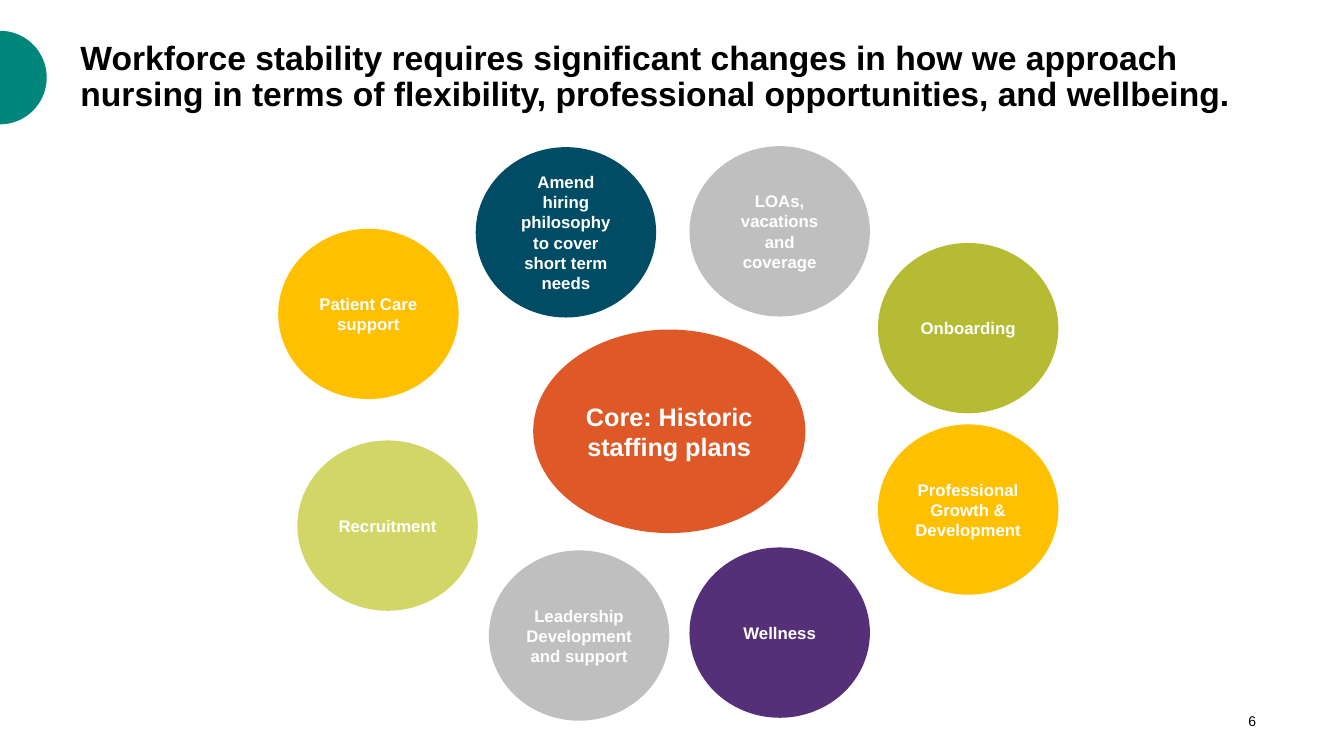
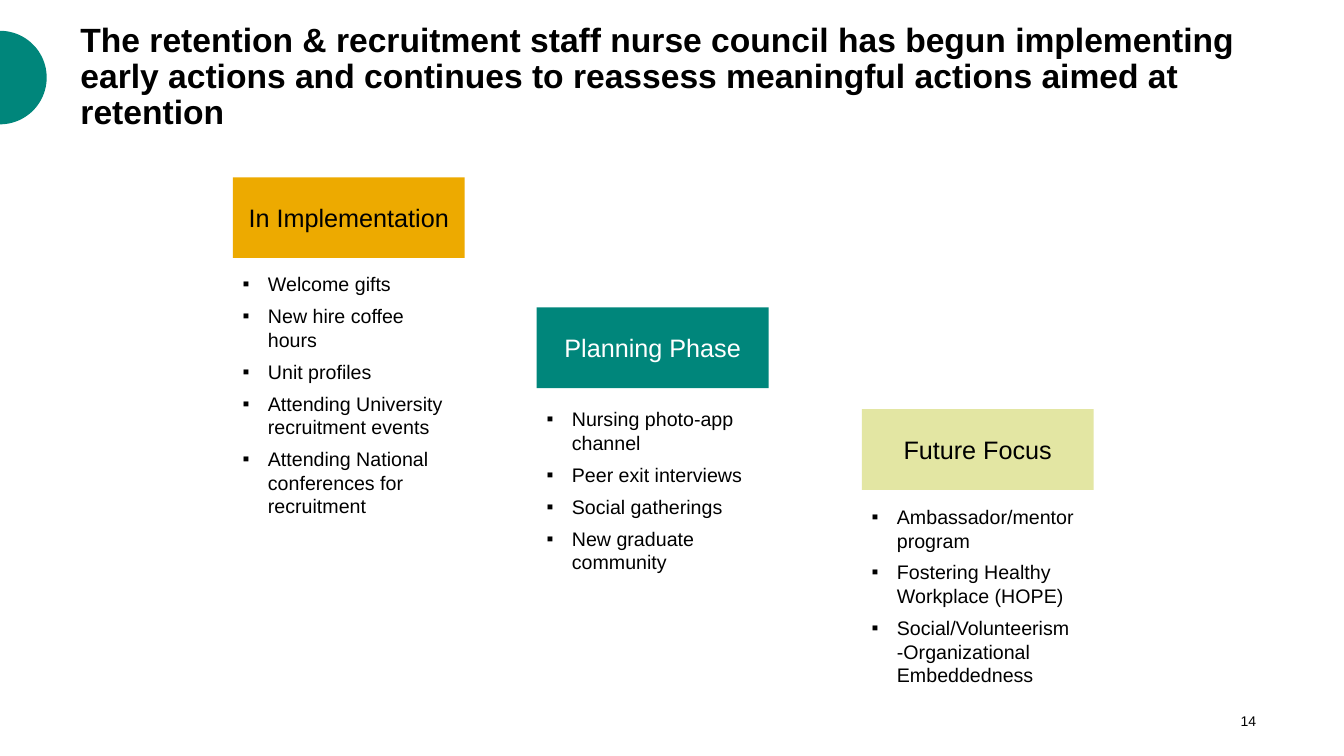
import math
from dataclasses import dataclass

from lxml import etree
from pptx import Presentation
from pptx.dml.color import RGBColor
from pptx.enum.shapes import MSO_SHAPE
from pptx.enum.text import MSO_ANCHOR, PP_ALIGN
from pptx.oxml.ns import qn
from pptx.util import Pt

OVAL, RECT = MSO_SHAPE.OVAL, MSO_SHAPE.RECTANGLE
TOP, MIDDLE = MSO_ANCHOR.TOP, MSO_ANCHOR.MIDDLE
LEFT, CENTER, RIGHT = PP_ALIGN.LEFT, PP_ALIGN.CENTER, PP_ALIGN.RIGHT


@dataclass(frozen=True)
class Theme:
    font: str = "Arial"
    black: str = "000000"
    white: str = "FFFFFF"
    teal: str = "00867B"
    navy: str = "004C64"
    rust: str = "DF5828"
    plum: str = "553078"
    gray: str = "BFBFBF"
    gold: str = "FFC000"
    amber: str = "EDAA00"
    olive: str = "B5BB32"
    lime: str = "D1D666"
    cream: str = "E3E6A3"
    title: int = 24
    head: int = 18
    body: int = 14
    label: int = 12
    page: int = 10


THEME = Theme()

# Satellite circles share one size: left, top, colour, lines
DISC = (128.9, 121.7)
DISCS = [
    (492.5, 104.4, THEME.gray, ["LOAs, vacations and coverage"]),
    (627.1, 173.5, THEME.olive, ["Onboarding"]),
    (627.1, 303.1, THEME.gold, ["Professional Growth & Development"]),
    (492.5, 391, THEME.plum, ["Wellness"]),
    (349.2, 393.1, THEME.gray, ["Leadership", "Development", "and support"]),
    (212.4, 314.6, THEME.lime, ["Recruitment"]),
    (198.7, 163.4, THEME.gold, ["Patient Care support"]),
    (339.8, 105.1, THEME.navy, ["Amend hiring philosophy to cover short term needs"]),
]

# Phases share one header size: left, top, list top, fill, ink, name, items
HEAD = (165.6, 57.6)
PHASES = [
    (166.3, 126.7, 190.8, THEME.amber, THEME.black, "In Implementation",
     ["Welcome gifts", "New hire coffee hours", "Unit profiles",
      "Attending University recruitment events",
      "Attending National conferences for recruitment"]),
    (383.4, 219.6, 287.3, THEME.teal, THEME.white, "Planning Phase",
     ["Nursing photo-app channel", "Peer exit interviews",
      "Social gatherings", "New graduate community"]),
    (615.6, 292.3, 357.1, THEME.cream, THEME.black, "Future Focus",
     ["Ambassador/mentor program", "Fostering Healthy Workplace (HOPE)",
      "Social/Volunteerism -Organizational Embeddedness"]),
]


def paint(shape, color):
    shape.shadow.inherit = False
    shape.fill.solid()
    shape.fill.fore_color.rgb = RGBColor.from_string(color)
    shape.line.fill.background()


def bullet(para):
    props = para._p.get_or_add_pPr()
    props.set("marL", str(Pt(18)))
    props.set("indent", str(-Pt(18)))
    etree.SubElement(props, qn("a:buFont")).set("typeface", THEME.font)
    etree.SubElement(props, qn("a:buChar")).set("char", "▪")


def write(shape, lines, *, size, color=THEME.black, bold=False, align=LEFT,
          anchor=MIDDLE, spacing=None, gap=0, bullets=False):
    """Fill a shape with one paragraph per line."""
    frame = shape.text_frame
    frame.word_wrap = True
    frame.vertical_anchor = anchor
    for i, line in enumerate(lines):
        para = frame.add_paragraph() if i else frame.paragraphs[0]
        if bullets:
            bullet(para)
        para.alignment = align
        if spacing:
            para.line_spacing = spacing
        if i and gap:
            para.space_before = Pt(gap)
        run = para.add_run()
        run.text = line
        run.font.name = THEME.font
        run.font.size = Pt(size)
        run.font.bold = bold
        run.font.color.rgb = RGBColor.from_string(color)


def add_text(slide, box, lines, **style):
    write(slide.shapes.add_textbox(*map(Pt, box)), lines, **style)


def add_block(slide, kind, box, fill, lines, **style):
    shape = slide.shapes.add_shape(kind, *map(Pt, box))
    paint(shape, fill)
    write(shape, lines, align=CENTER, **style)


def add_badge(slide, mid=55.4, radius=33.4, steps=60):
    """Half disc on the left edge."""
    turns = [math.pi * (i / steps - 0.5) for i in range(steps + 1)]
    points = [(Pt(radius * math.cos(t)), Pt(mid + radius * math.sin(t)))
              for t in turns]
    pen = slide.shapes.build_freeform(*points[0])
    pen.add_line_segments(points[1:], close=True)
    paint(pen.convert_to_shape(), THEME.teal)


def add_slide(deck, title, page):
    """Blank slide with the shared badge, title and page number."""
    slide = deck.slides.add_slide(deck.slide_layouts[6])
    add_badge(slide)
    add_text(slide, (50.4, 16.6, 853.9, 77.8), [title],
             size=THEME.title, bold=True, spacing=0.9)
    add_text(slide, (872.6, 500.4, 31.7, 28.8), [page],
             size=THEME.page, align=RIGHT)
    return slide


def add_wheel(slide):
    add_block(slide, OVAL, (380.9, 235.4, 194.4, 145.4), THEME.rust,
              ["Core: Historic staffing plans"],
              size=THEME.head, color=THEME.white, bold=True)
    for left, top, fill, lines in DISCS:
        add_block(slide, OVAL, (left, top, *DISC), fill, lines,
                  size=THEME.label, color=THEME.white, bold=True)


def add_phases(slide):
    wide, high = HEAD
    for left, top, below, fill, ink, name, items in PHASES:
        add_block(slide, RECT, (left, top, wide, high), fill, [name],
                  size=THEME.head, color=ink)
        add_text(slide, (left, below, wide, 140), items, size=THEME.body,
                 anchor=TOP, gap=6, bullets=True)


def main():
    deck = Presentation()
    deck.slide_width, deck.slide_height = Pt(960), Pt(540)

    # Staffing core and its satellites
    add_wheel(add_slide(
        deck, "Workforce stability requires significant changes in how we "
        "approach nursing in terms of flexibility, professional "
        "opportunities, and wellbeing.", "6"))

    # Council actions by phase
    add_phases(add_slide(
        deck, "The retention & recruitment staff nurse council has begun "
        "implementing early actions and continues to reassess meaningful "
        "actions aimed at retention", "14"))

    deck.save("out.pptx")


if __name__ == "__main__":
    main()
